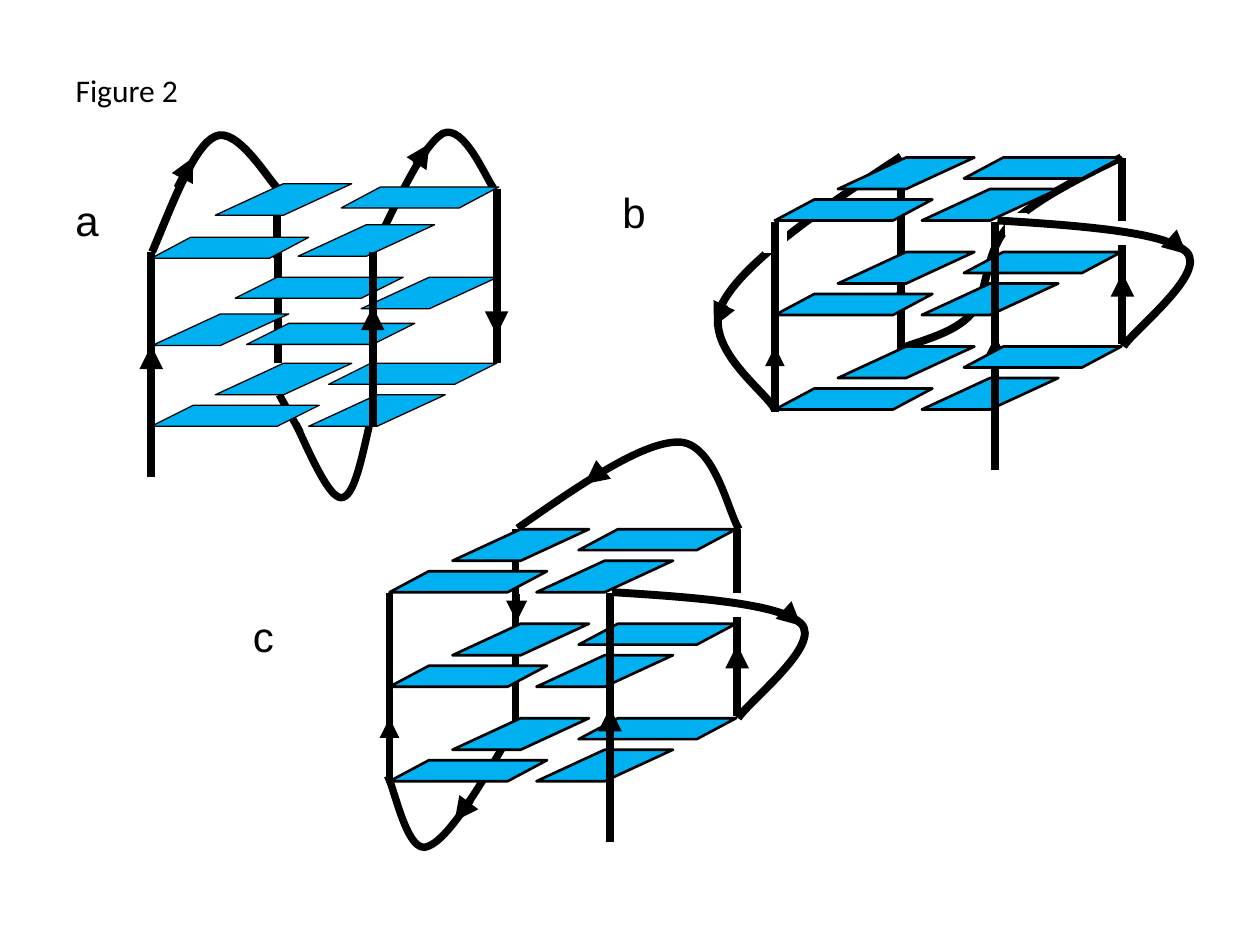
from dataclasses import dataclass
from typing import Any

from pptx import Presentation
from pptx.dml.color import RGBColor
from pptx.enum.shapes import MSO_CONNECTOR, MSO_SHAPE
from pptx.enum.text import MSO_ANCHOR, MSO_AUTO_SIZE, PP_ALIGN
from pptx.oxml.ns import qn
from pptx.util import Inches, Pt
from lxml.etree import SubElement


@dataclass(frozen=True)
class Theme:
    ink: RGBColor = RGBColor(0, 0, 0)
    plate: RGBColor = RGBColor(0x00, 0xB0, 0xF0)
    paper: RGBColor = RGBColor(255, 255, 255)
    accent: RGBColor = RGBColor(255, 0, 0)
    title_font: str = "Calibri"
    label_font: str = "Arial"
    title_size: float = 18
    label_size: float = 24
    strand: float = 4.5
    loop: float = 4.25
    thin: float = 0.75
    edge: float = 1.5


THEME = Theme()
COLUMNS, ROWS = 120, 90
PLATES = {"short": (13, 3, 0.5), "long": (15, 2, 0.25), "wide": (16, 2, 0.25)}
TETRAD = {"front left": ("long", 0, 4), "back left": ("short", 6, 0),
          "back right": ("long", 18, 0), "front right": ("short", 14, 3)}
LEVEL_ROWS = 9


@dataclass
class Panel:
    shapes: Any
    cell: int
    left: float
    top: float

    def at(self, column, row):
        return round((self.left + column) * self.cell), round((self.top + row) * self.cell)

    def size(self, *cells):
        return [round(count * self.cell) for count in cells]


def set_format(target, values):
    for name, value in values.items():
        setattr(target, name, value)


def set_line(shape, width, color=THEME.ink):
    shape.line.color.rgb = color
    shape.line.width = Pt(width)


def write_text(shape, text, font_name, size):
    frame = shape.text_frame
    frame.text = text
    set_format(frame, {"word_wrap": False, "auto_size": MSO_AUTO_SIZE.SHAPE_TO_FIT_TEXT,
                       "vertical_anchor": MSO_ANCHOR.TOP})
    paragraph = frame.paragraphs[0]
    paragraph.alignment = PP_ALIGN.LEFT
    set_format(paragraph.font, {"name": font_name, "size": Pt(size)})
    paragraph.font.color.rgb = THEME.ink


def add_label(panel, text, column, row):
    box = panel.shapes.add_textbox(*panel.at(column, row), *panel.size(4.8, 6))
    write_text(box, text, THEME.label_font, THEME.label_size)


def add_line(panel, start, end, width=THEME.strand, color=THEME.ink, head=False):
    line = panel.shapes.add_connector(MSO_CONNECTOR.STRAIGHT, *panel.at(*start), *panel.at(*end))
    set_line(line, width, color)
    if head:
        SubElement(line.line._get_or_add_ln(), qn("a:tailEnd"), type="triangle")
    SubElement(line._element.spPr, qn("a:effectLst"))


def add_strand(panel, column, bottom, top):
    add_line(panel, (column, bottom), (column, top))


def add_arrow(panel, start, end, width=THEME.strand, color=THEME.ink):
    add_line(panel, start, end, width, color, head=True)


def add_curve(panel, points, width=THEME.strand):
    start, *rest = [panel.at(*point) for point in points]
    builder = panel.shapes.build_freeform(*start)
    builder.add_line_segments(rest, close=False)
    shape = builder.convert_to_shape()
    shape.shadow.inherit = False
    shape.fill.background()
    set_line(shape, width)
    segments = list(shape._element.iter(qn("a:lnTo")))
    outline = segments[0].getparent()
    for first in range(0, len(segments), 3):
        bezier = SubElement(outline, qn("a:cubicBezTo"))
        for segment in segments[first:first + 3]:
            bezier.append(segment[0])
            outline.remove(segment)


def add_filled(panel, kind, column, row, width, height, fill, line_color, line_width):
    shape = panel.shapes.add_shape(kind, *panel.at(column, row), *panel.size(width, height))
    shape.shadow.inherit = False
    shape.fill.solid()
    shape.fill.fore_color.rgb = fill
    set_line(shape, line_width, line_color)
    return shape


def add_plate(panel, kind, column, row, edge):
    width, height, slant = PLATES[kind]
    plate = add_filled(panel, MSO_SHAPE.PARALLELOGRAM, column, row, width, height,
                       THEME.plate, THEME.ink, edge)
    plate.adjustments[0] = width * slant / height


def add_gap(panel, column, row):
    add_filled(panel, MSO_SHAPE.RECTANGLE, column, row, 2, 2, THEME.paper, THEME.paper, THEME.edge)


def add_tetrad_plate(panel, place, level):
    kind, column, row = TETRAD[place]
    add_plate(panel, kind, column, row + level * LEVEL_ROWS, THEME.edge)


def draw_antiparallel(panel):
    add_curve(panel, [(21.1, 12), (23.5, 7), (25.9, 1.8), (27.8, 0.7),
                      (29.8, -0.2), (31.9, 5), (32.6, 5.9)], THEME.loop)
    add_curve(panel, [(0.1, 12), (2.2, 7), (4.1, 1.9), (6.1, 1), (8.2, 0), (11.2, 5.2), (12.1, 6)])
    add_arrow(panel, (12.1, 13.4), (12.1, 20.5), THEME.edge)
    add_line(panel, (12.2, 25.6), (14.2, 29.2), THEME.loop)
    add_strand(panel, 12.1, 22.6, 11.6)
    add_strand(panel, 12, 12.6, 5.8)
    for kind, column, row in [("long", 0, 10.6), ("short", 14, 9.4), ("short", 6.1, 5.5),
                              ("short", 20, 14.4), ("wide", 8, 14.4), ("short", 0.1, 17.9),
                              ("wide", 9.1, 18.8), ("long", 18.1, 5.8)]:
        add_plate(panel, kind, column, row, THEME.thin)
    add_strand(panel, 0, 33.4, 12)
    add_strand(panel, 32.9, 22.6, 6)
    add_curve(panel, [(13.8, 28.4), (15.4, 31.9), (17, 35.4), (18.1, 35.4),
                      (19.3, 35.4), (20, 31.9), (20.8, 28.4)], THEME.loop)
    for kind, column, row in [("short", 15, 25.6), ("wide", 16.9, 22.6),
                              ("short", 6.1, 22.6), ("wide", 0, 26.6)]:
        add_plate(panel, kind, column, row, THEME.thin)
    add_strand(panel, 21.1, 28.7, 12)
    for start, end in [((2.5, 5.9), (4, 3)), ((0, 26.9), (0, 20.9)), ((25.2, 3.7), (26.5, 1.7)),
                       ((32.9, 8.3), (32.9, 19.9)), ((21.1, 23.6), (21.1, 17.2))]:
        add_arrow(panel, start, end)
    add_label(panel, "a", -8.4, 5.9)


def draw_stack(panel, upper_plates, arrows):
    add_strand(panel, 33.1, 17.8, 0)
    add_gap(panel, 32, 6.2)
    add_strand(panel, 12, 18.5, 0)
    for level in range(3):
        for place in TETRAD:
            if (place, level) not in upper_plates:
                add_tetrad_plate(panel, place, level)
    add_strand(panel, 21, 29.8, 6.1)
    add_arrow(panel, (0, 24), (0, 18), 3.75)
    for start, end in [((21, 23), (21, 17)), ((33.1, 17.8), (33.1, 11)),
                       ((38.2, 8.3), (39.2, 9.2)), *arrows]:
        add_arrow(panel, start, end)
    add_gap(panel, -1, 7)
    add_gap(panel, -0.7, 9.8)
    add_strand(panel, 0, 24.2, 6.1)
    add_gap(panel, 22, 5.4)
    add_curve(panel, [(21.2, 6), (29.2, 6.5), (37.2, 7.1), (39.2, 9),
                      (41.2, 11), (34.2, 16.4), (33.2, 18)])
    for place, level in upper_plates:
        add_tetrad_plate(panel, place, level)


def draw_parallel(panel):
    add_curve(panel, [(33, 0), (28.9, 2), (24.7, 4.1), (22.3, 6.5), (19.9, 9),
                      (20.4, 13), (18.7, 14.9), (17, 16.9), (13.2, 17.6), (12.1, 18.2)])
    add_curve(panel, [(12, -0.1), (4.4, 4.9), (-3, 10), (-5, 13.9),
                      (-7.1, 18), (-0.8, 22.3), (0, 24)])
    add_arrow(panel, (12, 18), (12, 12), 4, THEME.accent)
    draw_stack(panel, [("front right", 0), ("back left", 1), ("front left", 1), ("back right", 2)],
               [((-4.8, 14), (-5.8, 16.1))])
    add_label(panel, "b", -15.7, 2.2)


def draw_hybrid(panel):
    add_curve(panel, [(12.4, 18), (9.1, 23.6), (5.9, 29.3), (3.7, 30.2),
                      (1.7, 31.2), (0.5, 24.7), (-0.2, 23.5)], THEME.loop)
    add_curve(panel, [(12.2, -0.1), (18.1, -4.2), (24, -8.3), (27.5, -8.3),
                      (31, -8.3), (32.3, -1.4), (33.3, 0)], THEME.loop)
    draw_stack(panel, [("front right", 0), ("front left", 1)],
               [((7.7, 25.8), (6.2, 27.8)), ((20, -5.4), (18.6, -4.3))])
    add_arrow(panel, (12.1, 6.2), (12.1, 8.8), 4)
    add_label(panel, "c", -14.2, 7.2)


def draw_title(slide, page):
    title = slide.shapes.title
    (left, top), (width, height) = page.at(6, 6.2), page.size(12.2, 4.8)
    set_format(title, {"left": left, "top": top, "width": width, "height": height})
    write_text(title, "Figure 2", THEME.title_font, THEME.title_size)


def main():
    presentation = Presentation()
    set_format(presentation, {"slide_width": Inches(10), "slide_height": Inches(7.5)})
    cell = min(presentation.slide_width // COLUMNS, presentation.slide_height // ROWS)
    slide = presentation.slides.add_slide(presentation.slide_layouts[5])
    for draw, left, top in [(draw_antiparallel, 14.4, 12), (draw_parallel, 73.8, 15),
                            (draw_hybrid, 37.1, 50.4)]:
        draw(Panel(slide.shapes.add_group_shape().shapes, cell, left, top))
    draw_title(slide, Panel(slide.shapes, cell, 0, 0))
    presentation.save("out.pptx")


if __name__ == "__main__":
    main()
